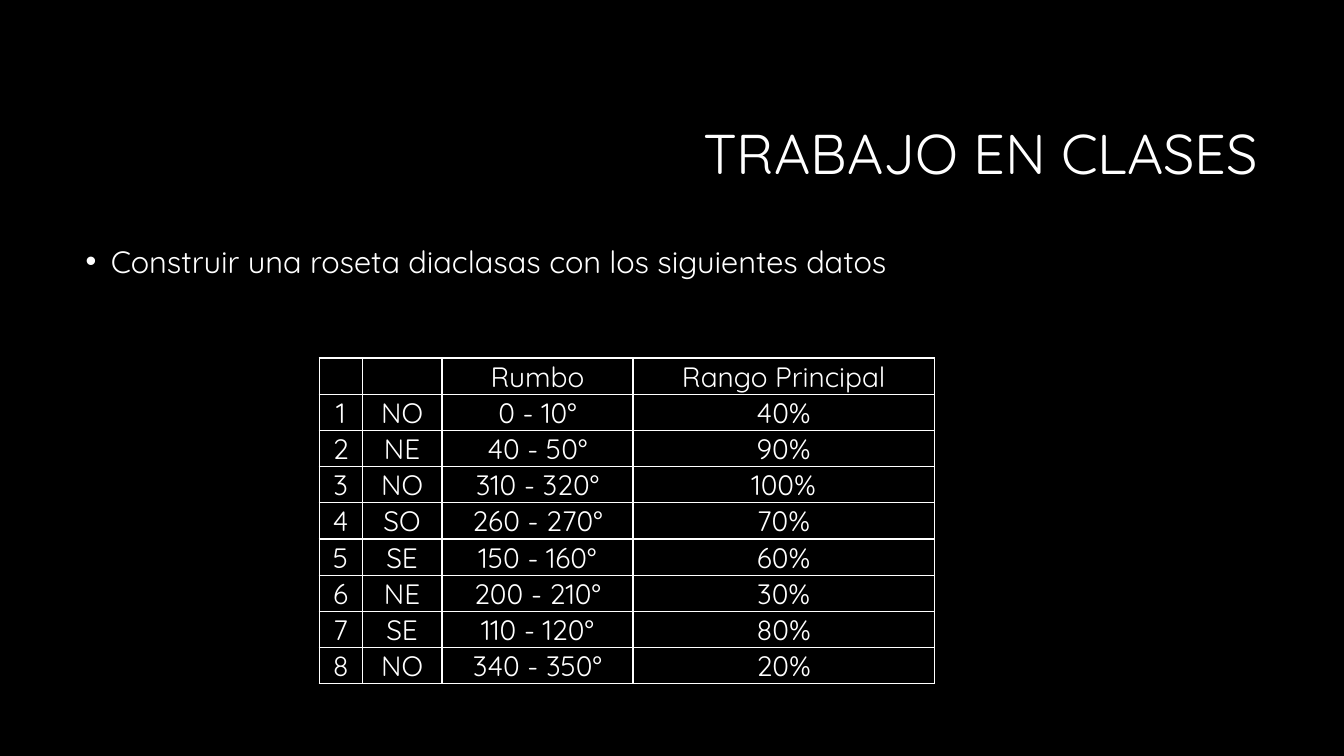
from lxml.etree import SubElement
from pptx import Presentation
from pptx.dml.color import RGBColor
from pptx.enum.text import MSO_ANCHOR, MSO_AUTO_SIZE, PP_ALIGN
from pptx.oxml import parse_xml
from pptx.oxml.ns import nsdecls, qn
from pptx.util import Emu, Pt

BLACK = RGBColor(0x00, 0x00, 0x00)
WHITE = RGBColor(0xFF, 0xFF, 0xFF)
PX = 9525

COLUMN_WIDTHS = [41, 76, 182, 287]
ROW_HEIGHT = 33
HEADER = ["", "", "Rumbo", "Rango Principal"]
READINGS = [
    ("NO", "0 - 10°", "40%"),
    ("NE", "40 - 50°", "90%"),
    ("NO", "310 - 320°", "100%"),
    ("SO", "260 - 270°", "70%"),
    ("SE", "150 - 160°", "60%"),
    ("NE", "200 - 210°", "30%"),
    ("SE", "110 - 120°", "80%"),
    ("NO", "340 - 350°", "20%"),
]


class ClassworkPage:
    """Draws the elements of a white-on-black classwork page."""

    def __init__(self, deck, font="Quicksand", color=WHITE, background=BLACK):
        self.font = font
        self.color = color
        self.page = deck.slides.add_slide(deck.slide_layouts[1])
        fill = self.page.background.fill
        fill.solid()
        fill.fore_color.rgb = background

    def place(self, box, left, top, width, height):
        box.left, box.top = Emu(left * PX), Emu(top * PX)
        box.width, box.height = Emu(width * PX), Emu(height * PX)

    def style(self, para, size, alignment):
        para.alignment = alignment
        para.font.name = self.font
        para.font.size = Pt(size)
        para.font.color.rgb = self.color

    def fill_placeholder(self, box, text, anchor):
        frame = box.text_frame
        frame.text = text
        frame.word_wrap = True
        frame.auto_size = MSO_AUTO_SIZE.NONE
        frame.vertical_anchor = anchor
        para = frame.paragraphs[0]
        para.line_spacing = 0.9
        para.space_before = Pt(0)
        return para

    def title(self, text, left, top, width, height):
        box = self.page.shapes.title
        self.place(box, left, top, width, height)
        para = self.fill_placeholder(box, text, MSO_ANCHOR.MIDDLE)
        self.style(para, 40, PP_ALIGN.RIGHT)

    def bullet(self, text, left, top, width, height):
        box = self.page.placeholders[1]
        self.place(box, left, top, width, height)
        para = self.fill_placeholder(box, text, MSO_ANCHOR.TOP)
        properties = para._p.get_or_add_pPr()
        properties.set("marL", str(24 * PX))
        properties.set("indent", str(-24 * PX))
        SubElement(properties, qn("a:buChar"), char="•")
        self.style(para, 22, PP_ALIGN.LEFT)

    def border(self, cell):
        properties = cell._tc.get_or_add_tcPr()
        for position, side in enumerate(("lnL", "lnR", "lnT", "lnB")):
            line = parse_xml(
                f'<a:{side} {nsdecls("a")} w="{Pt(1)}"><a:solidFill>'
                f'<a:srgbClr val="{self.color}"/></a:solidFill></a:{side}>'
            )
            properties.insert(position, line)

    def cell(self, cell, text):
        cell.text = text
        cell.fill.background()
        cell.vertical_anchor = MSO_ANCHOR.MIDDLE
        cell.margin_left = cell.margin_right = cell.margin_top = Emu(PX)
        cell.margin_bottom = Emu(0)
        self.style(cell.text_frame.paragraphs[0], 20, PP_ALIGN.CENTER)
        self.border(cell)

    def table(self, rows, left, top, widths, row_height):
        frame = self.page.shapes.add_table(
            len(rows), len(widths), Emu(left * PX), Emu(top * PX),
            Emu(sum(widths) * PX), Emu(len(rows) * row_height * PX),
        )
        table = frame.table
        table.first_row = table.horz_banding = False
        for column, width in zip(table.columns, widths):
            column.width = Emu(width * PX)
        for row, texts in zip(table.rows, rows):
            row.height = Emu(row_height * PX)
            for cell, text in zip(row.cells, texts):
                self.cell(cell, text)


def main():
    deck = Presentation()
    deck.slide_width, deck.slide_height = Emu(1280 * PX), Emu(720 * PX)
    page = ClassworkPage(deck)
    page.title("TRABAJO EN CLASES", 304, 81, 904, 135)
    page.bullet(
        "Construir una roseta diaclasas con los siguientes datos",
        72, 230, 1136, 422,
    )
    numbered = [(str(number), *reading) for number, reading in enumerate(READINGS, 1)]
    page.table([HEADER, *numbered], 304, 341, COLUMN_WIDTHS, ROW_HEIGHT)
    deck.save("out.pptx")


if __name__ == "__main__":
    main()
